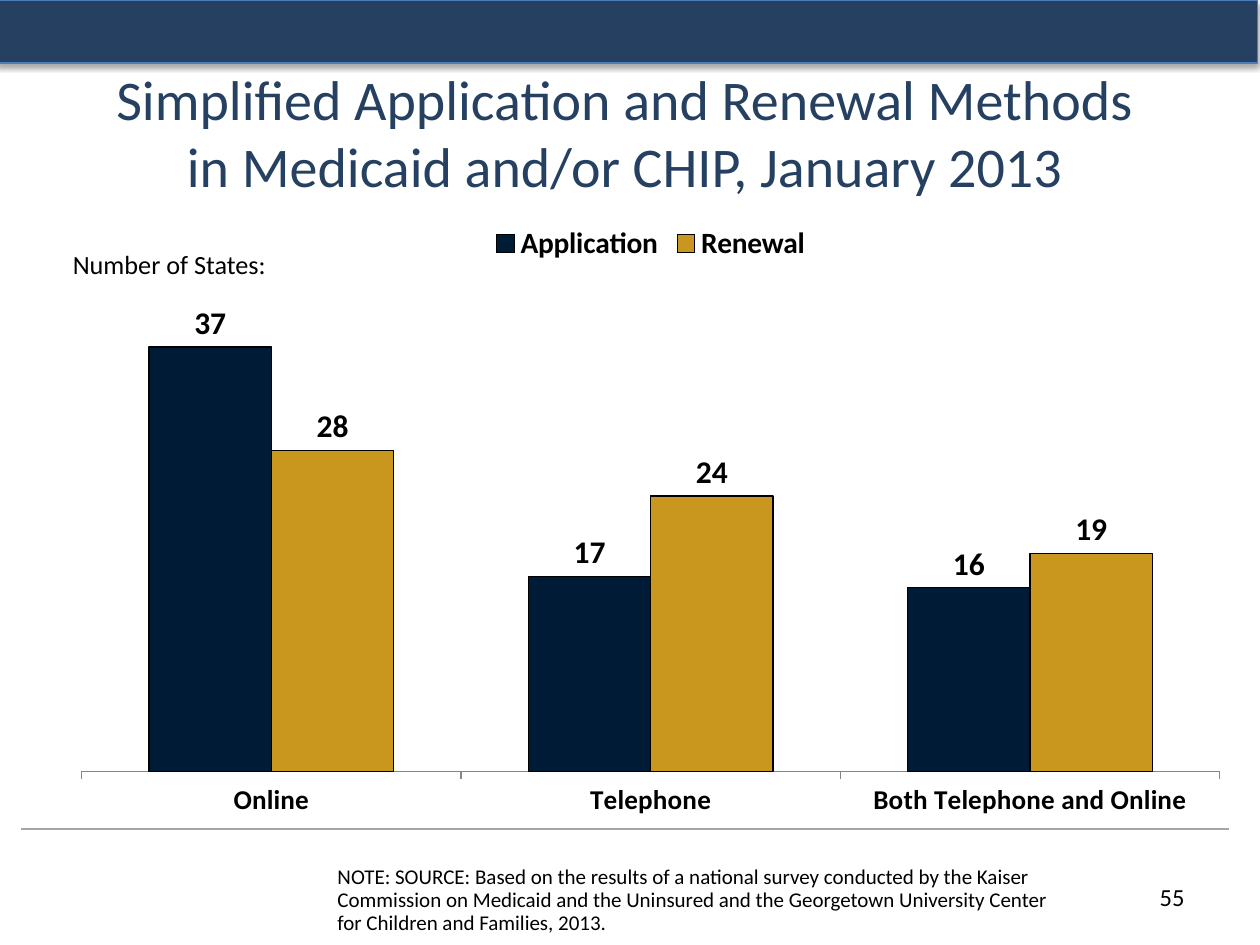
"""Build the slide on simplified Medicaid and CHIP application and renewal methods."""
from lxml import etree
from pptx import Presentation, util as u
from pptx.chart.data import CategoryChartData
from pptx.dml.color import RGBColor
from pptx.enum import chart as ch, shapes, text
from pptx.oxml import parse_xml
from pptx.oxml.ns import nsdecls, qn

FONT = "Calibri"
COLORS = {"navy": "254061", "edge": "4B7EBC", "rule": "A6A6A6", "axis": "868686",
          "black": "000000", "application": "001B36", "renewal": "C9961E"}
CATEGORIES = ["Online", "Telephone", "Both Telephone and Online"]
SERIES = [("Application", [37, 17, 16], "application"),
          ("Renewal", [28, 24, 19], "renewal")]
PLOT = {"x": 0.016, "y": 0.165, "w": 0.968, "h": 0.74}
LEFT, CENTER, RIGHT = text.PP_ALIGN.LEFT, text.PP_ALIGN.CENTER, text.PP_ALIGN.RIGHT
TOP, MIDDLE = text.MSO_ANCHOR.TOP, text.MSO_ANCHOR.MIDDLE
TEXTS = [
    ("Simplified Application and Renewal Methods\vin Medicaid and/or CHIP, January 2013",
     (0, 0.42, 9.92, 1.25), 32, "navy", CENTER, MIDDLE, 1),
    ("NOTE: SOURCE: Based on the results of a national survey conducted by the Kaiser "
     "Commission on Medicaid and the Uninsured and the Georgetown University Center "
     "for Children and Families, 2013.",
     (2.58, 6.83, 5.92, 0.58), 12, "black", LEFT, TOP, 0.9),
    ("Number of States:", (0.48, 1.92, 5.86, 0.35), 15, "black", LEFT, TOP, 1),
    ("55", (7.17, 6.95, 2.33, 0.4), 14, "black", RIGHT, TOP, 1),
]


def inches(values):
    return [u.Inches(value) for value in values]


def rgb(name):
    return RGBColor.from_string(COLORS[name])


def style_font(font, size, color="black", bold=False):
    font.name, font.size, font.bold = FONT, u.Pt(size), bold
    font.color.rgb = rgb(color)


def style_line(line, color):
    line.color.rgb = rgb(color)
    line.width = u.Pt(0.75)


def add_text(page, words, place, size, color, align, anchor, spacing):
    frame = page.shapes.add_textbox(*inches(place)).text_frame
    frame.word_wrap = True
    frame.vertical_anchor = anchor
    frame.text = words
    para = frame.paragraphs[0]
    para.alignment, para.line_spacing = align, spacing
    for span in para.runs:
        style_font(span.font, size, color)


def place_plot(chart):
    area = chart._chartSpace.chart.plotArea
    for old in area.findall(qn("c:layout")):
        area.remove(old)
    layout = etree.Element(qn("c:layout"))
    manual = etree.SubElement(layout, qn("c:manualLayout"))
    settings = [("layoutTarget", "inner"), ("xMode", "edge"), ("yMode", "edge"), *PLOT.items()]
    for tag, value in settings:
        etree.SubElement(manual, qn(f"c:{tag}")).set("val", str(value))
    area.insert(0, layout)


def add_states_chart(page):
    data = CategoryChartData()
    data.categories = CATEGORIES
    for name, values, _ in SERIES:
        data.add_series(name, values)
    chart = page.shapes.add_chart(ch.XL_CHART_TYPE.COLUMN_CLUSTERED,
                                  *inches((0.5, 1.67, 9.33, 4.92)), data).chart
    style_font(chart.font, 18)
    chart.has_title = False
    chart.has_legend = True
    chart.legend.position = ch.XL_LEGEND_POSITION.TOP
    chart.legend.include_in_layout = False
    style_font(chart.legend.font, 16.8, bold=True)

    axis = chart.category_axis
    axis.major_tick_mark = ch.XL_TICK_MARK.OUTSIDE
    style_font(axis.tick_labels.font, 15.5, bold=True)
    style_line(axis.format.line, "axis")
    scale = chart.value_axis
    scale.minimum_scale, scale.maximum_scale = 0, 40
    scale.has_major_gridlines = False
    scale.visible = False

    plot = chart.plots[0]
    plot.gap_width, plot.overlap = 110, 0
    plot.vary_by_categories = False
    for series, (_, _, color) in zip(plot.series, SERIES):
        series.format.fill.solid()
        series.format.fill.fore_color.rgb = rgb(color)
        style_line(series.format.line, "black")
        labels = series.data_labels
        labels.show_value = True
        labels.position = ch.XL_LABEL_POSITION.OUTSIDE_END
        style_font(labels.font, 18, bold=True)
    place_plot(chart)


def add_banner(page):
    banner = page.shapes.add_shape(shapes.MSO_SHAPE.RECTANGLE, *inches((-0.02, 0, 10, 0.5)))
    banner.fill.solid()
    banner.fill.fore_color.rgb = rgb("navy")
    style_line(banner.line, "edge")
    banner._element.spPr.append(parse_xml(
        f'<a:effectLst {nsdecls("a")}><a:outerShdw blurRad="{u.Pt(3.1)}" dist="{u.Pt(1.8)}" '
        f'dir="5400000" rotWithShape="0"><a:srgbClr val="{COLORS["black"]}">'
        '<a:alpha val="35000"/></a:srgbClr></a:outerShdw></a:effectLst>'))


def add_rule(page):
    rule = page.shapes.add_connector(shapes.MSO_CONNECTOR.STRAIGHT,
                                     *inches((0.17, 6.58, 9.75, 6.58)))
    style_line(rule.line, "rule")
    etree.SubElement(rule._element.spPr, qn("a:effectLst"))


def main():
    deck = Presentation()
    deck.slide_width, deck.slide_height = inches((10, 7.5))
    page = deck.slides.add_slide(deck.slide_layouts[6])
    add_states_chart(page)
    add_banner(page)
    add_rule(page)
    for entry in TEXTS:
        add_text(page, *entry)
    deck.save("out.pptx")


if __name__ == "__main__":
    main()
